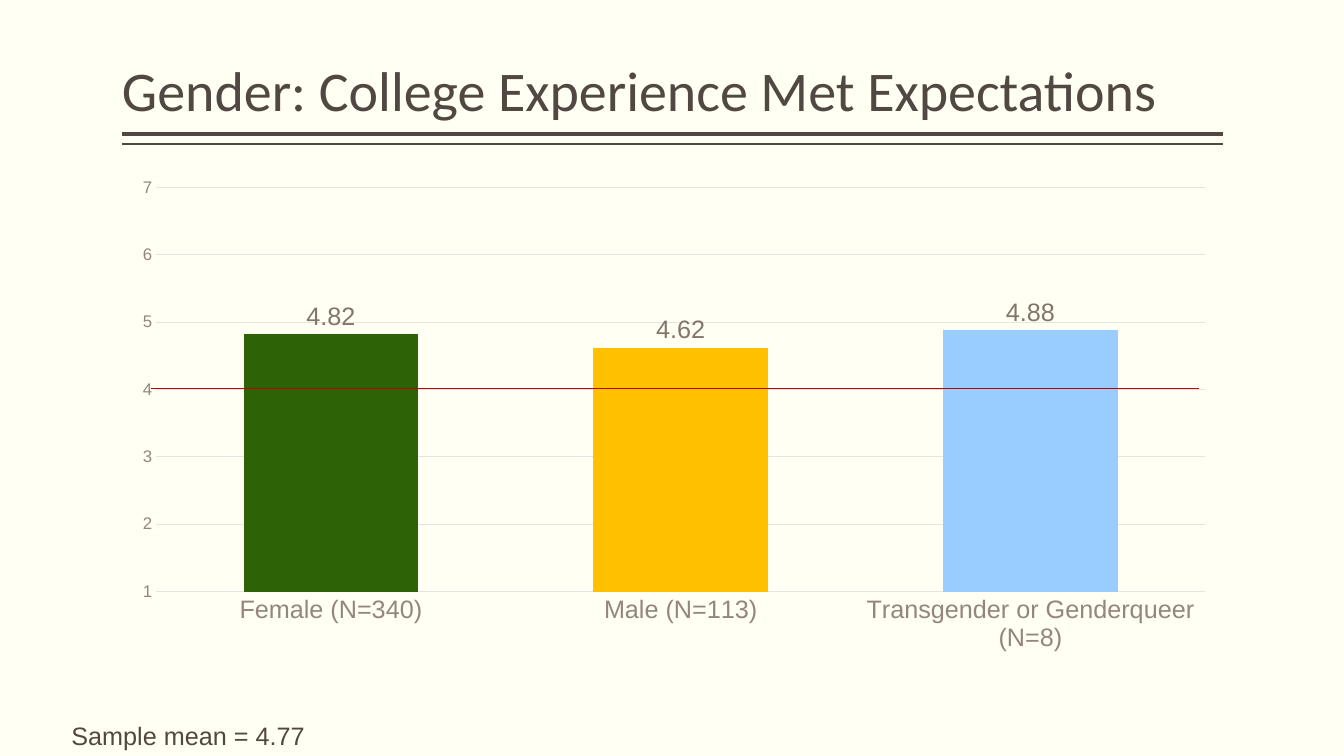
from lxml import etree
from pptx import Presentation
from pptx.chart.data import CategoryChartData
from pptx.dml.color import RGBColor
from pptx.enum.chart import XL_CHART_TYPE, XL_LABEL_POSITION, XL_TICK_MARK
from pptx.enum.shapes import MSO_CONNECTOR
from pptx.enum.text import MSO_ANCHOR, MSO_AUTO_SIZE, PP_ALIGN
from pptx.oxml.ns import qn
from pptx.util import Inches, Pt

COLUMNS = XL_CHART_TYPE.COLUMN_CLUSTERED
OUTSIDE_END = XL_LABEL_POSITION.OUTSIDE_END
NO_TICK = XL_TICK_MARK.NONE
STRAIGHT = MSO_CONNECTOR.STRAIGHT
BOTTOM = MSO_ANCHOR.BOTTOM
LEFT = PP_ALIGN.LEFT
FIXED = MSO_AUTO_SIZE.NONE
GROW = MSO_AUTO_SIZE.SHAPE_TO_FIT_TEXT

COLORS = {
    "background": "FFFFF3",
    "text": "514843",
    "axis": "94867E",
    "label": "83746C",
    "grid": "E6E3E1",
    "midpoint": "C00000",
    "female": "2D6206",
    "male": "FFC000",
    "transgender": "99CCFF",
}
GENDER_MEANS = [
    ("Female (N=340)", 4.82, "female"),
    ("Male (N=113)", 4.62, "male"),
    ("Transgender or Genderqueer (N=8)", 4.88, "transgender"),
]
CONTENT_LEFT, CONTENT_WIDTH = 1.21, 10.92
PLOT_LAYOUT = {"x": 0.031, "y": 0.022, "w": 0.953, "h": 0.802}


def rgb(name):
    return RGBColor.from_string(COLORS[name])


def format_font(font, size, color="text", face="Arial"):
    font.size = Pt(size)
    font.name = face
    font.color.rgb = rgb(color)


def format_line(line, color, width):
    line.color.rgb = rgb(color)
    line.width = Pt(width)


def write_text(frame, text, size, face="Arial", spacing=None):
    paragraph = frame.paragraphs[0]
    paragraph.alignment = LEFT
    paragraph.line_spacing = spacing
    run = paragraph.add_run()
    run.text = text
    format_font(run.font, size, face=face)


def place_plot(chart):
    """Fix the inner plot area at the fractions in PLOT_LAYOUT."""
    plot_area = chart.element.find(".//" + qn("c:plotArea"))
    for automatic in plot_area.findall(qn("c:layout")):
        plot_area.remove(automatic)
    layout = etree.Element(qn("c:layout"))
    manual = etree.SubElement(layout, qn("c:manualLayout"))
    settings = {"layoutTarget": "inner", "xMode": "edge", "yMode": "edge"}
    for tag, value in {**settings, **PLOT_LAYOUT}.items():
        etree.SubElement(manual, qn(f"c:{tag}")).set("val", str(value))
    plot_area.insert(0, layout)


class GenderSlide:
    def __init__(self, presentation):
        self.slide = presentation.slides.add_slide(presentation.slide_layouts[5])
        self.shapes = self.slide.shapes
        background = self.slide.background.fill
        background.solid()
        background.fore_color.rgb = rgb("background")

    def rule(self, start, end, y, color, width):
        rule = self.shapes.add_connector(
            STRAIGHT, Inches(start), Inches(y), Inches(end), Inches(y))
        format_line(rule.line, color, width)
        etree.SubElement(rule.element.spPr, qn("a:effectLst"))

    def title(self, text):
        title = self.shapes.title
        title.left, title.top = Inches(CONTENT_LEFT), Inches(0.08)
        title.width, title.height = Inches(CONTENT_WIDTH), Inches(1.2)
        frame = title.text_frame
        frame.auto_size = FIXED
        frame.vertical_anchor = BOTTOM
        frame.margin_left = frame.margin_right = 0
        write_text(frame, text, 40, face="Calibri", spacing=0.9)

    def note(self, text):
        note = self.shapes.add_textbox(
            Inches(0.61), Inches(7.1), Inches(2.57), Inches(0.4))
        note.text_frame.word_wrap = False
        note.text_frame.auto_size = GROW
        write_text(note.text_frame, text, 18)

    def column_chart(self, rows):
        data = CategoryChartData()
        data.categories = [category for category, _, _ in rows]
        data.add_series("Series 1", [mean for _, mean, _ in rows])
        chart = self.shapes.add_chart(
            COLUMNS, Inches(CONTENT_LEFT), Inches(1.75),
            Inches(CONTENT_WIDTH), Inches(5), data).chart
        chart.has_legend = chart.has_title = False
        format_font(chart.font, 10)
        place_plot(chart)

        plot = chart.plots[0]
        plot.vary_by_categories = False
        plot.gap_width, plot.overlap = 100, -24
        for index, (_, _, color) in enumerate(rows):
            fill = plot.series[0].points[index].format.fill
            fill.solid()
            fill.fore_color.rgb = rgb(color)
        plot.has_data_labels = True
        labels = plot.data_labels
        labels.show_value = True
        labels.position = OUTSIDE_END
        format_font(labels.font, 18, "label")

        for axis, size in ((chart.category_axis, 18), (chart.value_axis, 12)):
            axis.major_tick_mark = axis.minor_tick_mark = NO_TICK
            format_font(axis.tick_labels.font, size, "axis")
        format_line(chart.category_axis.format.line, "grid", 1)
        scale = chart.value_axis
        scale.minimum_scale, scale.maximum_scale, scale.major_unit = 1, 7, 1
        scale.format.line.fill.background()
        format_line(scale.major_gridlines.format.line, "grid", 0.75)


def main():
    presentation = Presentation()
    presentation.slide_width = Inches(13.33)
    presentation.slide_height = Inches(7.5)
    slide = GenderSlide(presentation)
    content_right = CONTENT_LEFT + CONTENT_WIDTH
    for y, width in ((1.33, 3), (1.43, 1)):
        slide.rule(CONTENT_LEFT, content_right, y, "text", width)
    slide.title("Gender: College Experience Met Expectations")
    slide.column_chart(GENDER_MEANS)
    slide.note("Sample mean = 4.77")
    slide.rule(1.5, 11.89, 3.85, "midpoint", 0.5)
    presentation.save("out.pptx")


if __name__ == "__main__":
    main()
